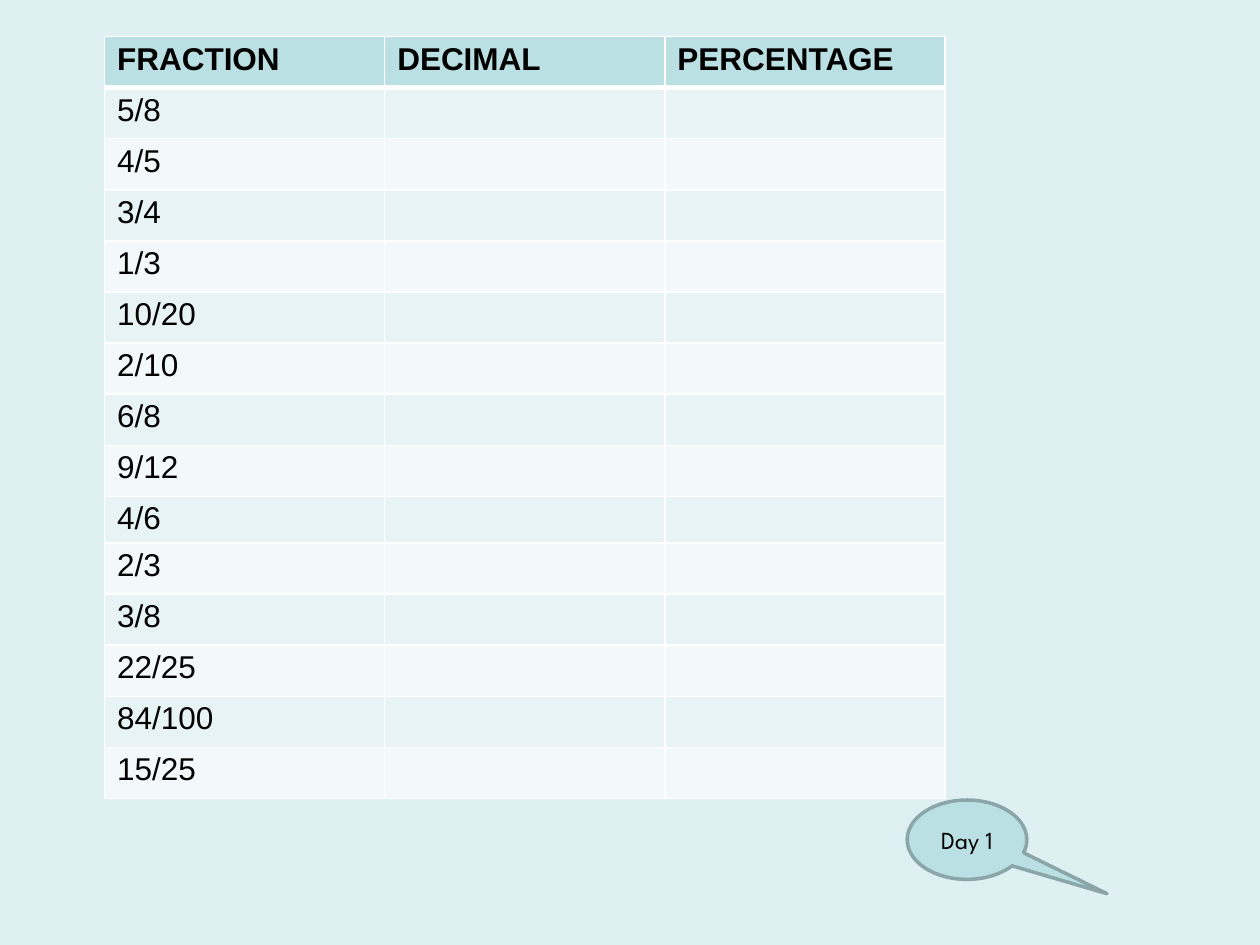
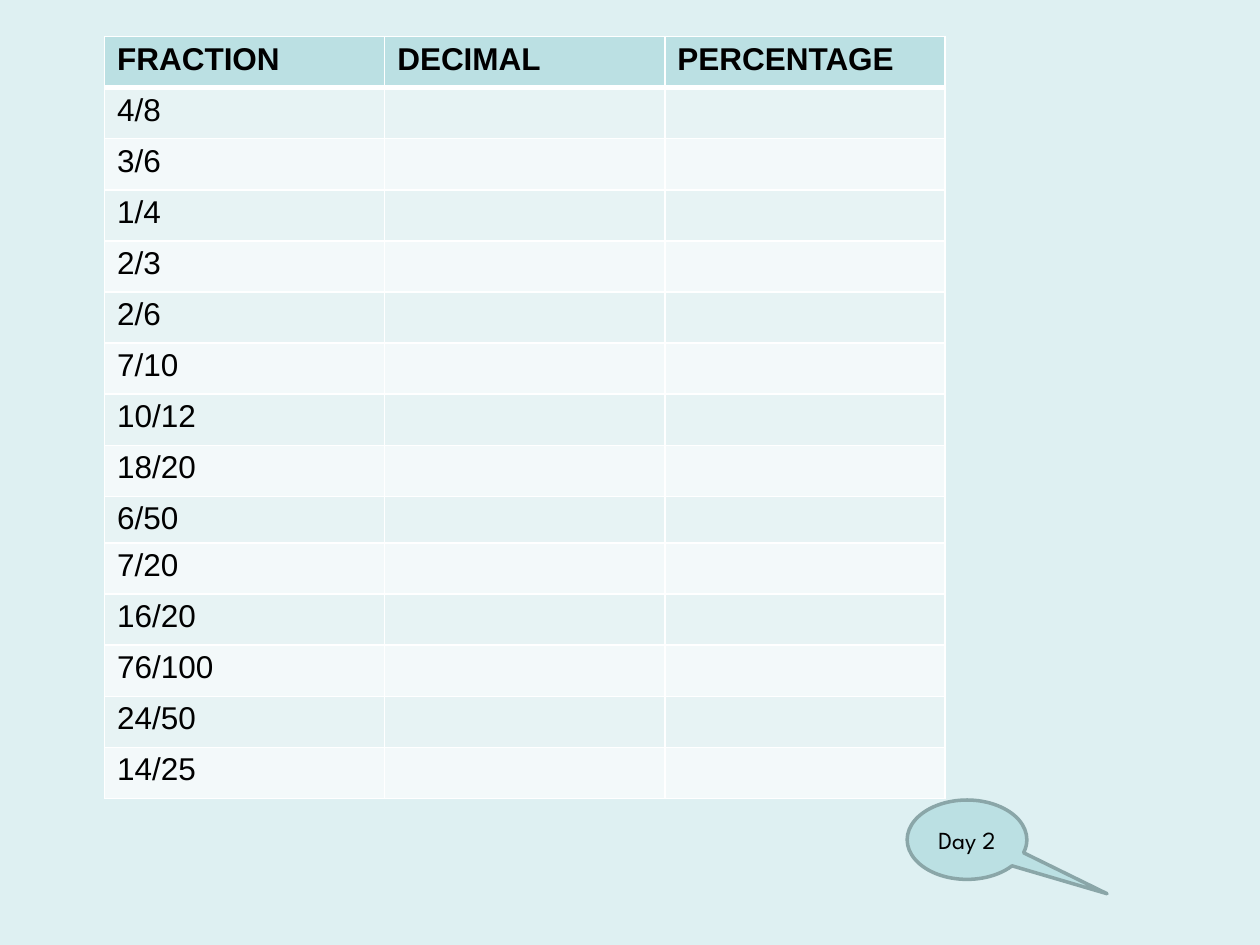
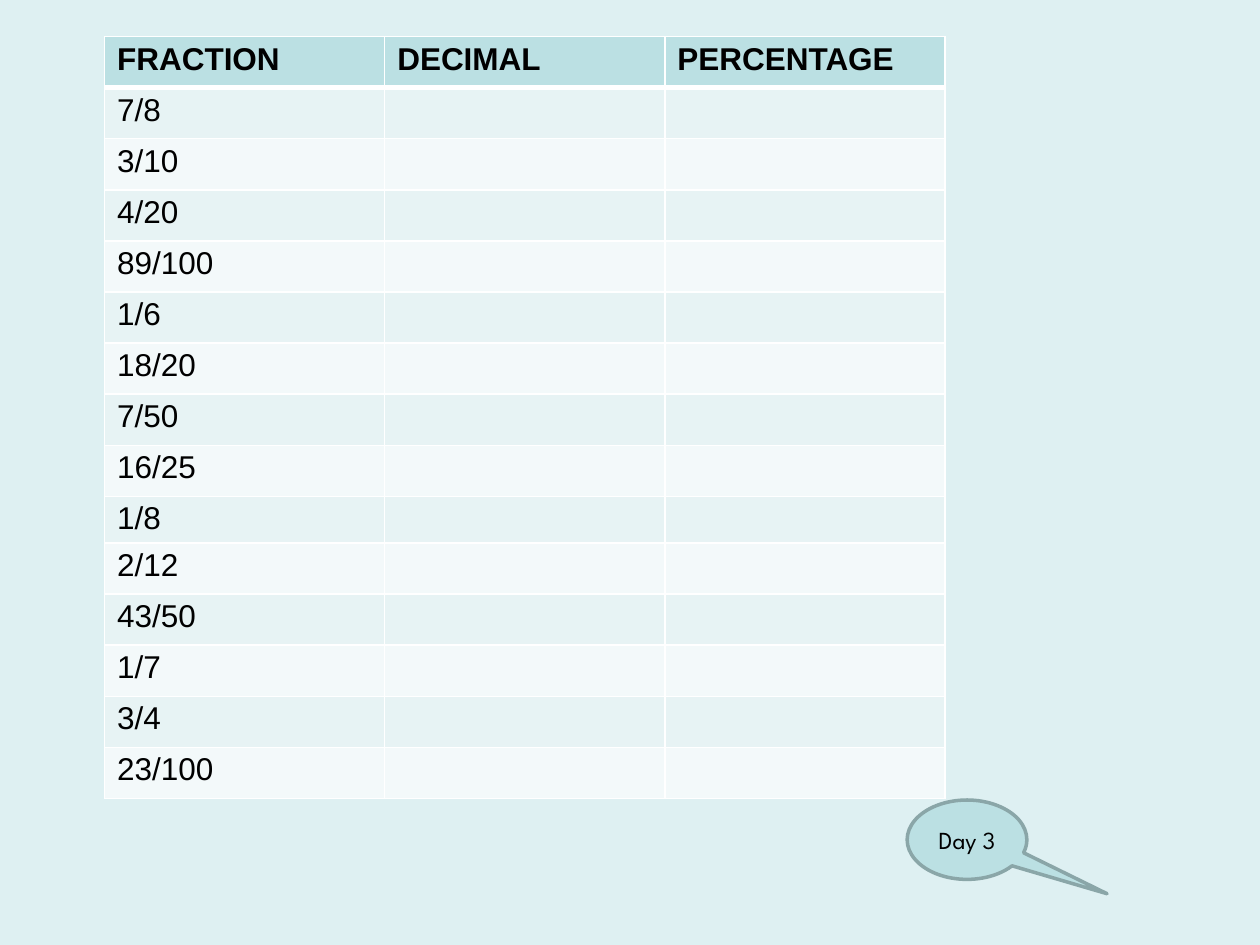
from lxml.etree import SubElement
from pptx import Presentation
from pptx.dml.color import RGBColor
from pptx.enum.shapes import MSO_SHAPE
from pptx.enum.text import MSO_ANCHOR, PP_ALIGN
from pptx.oxml.ns import qn
from pptx.util import Inches, Pt

COLORS = {
    "background": "DEF0F2",
    "accent": "BBE0E3",
    "odd_row": "E7F3F4",
    "even_row": "F3F9FA",
    "border": "FFFFFF",
    "outline": "8AA6A8",
    "text": "000000",
}
TABLE_FONT, DAY_FONT = "Arial", "League Spartan"

HEADERS = ["FRACTION", "DECIMAL", "PERCENTAGE"]
DAYS = {
    "Day 1": ["5/8", "4/5", "3/4", "1/3", "10/20", "2/10", "6/8",
              "9/12", "4/6", "2/3", "3/8", "22/25", "84/100", "15/25"],
    "Day 2": ["4/8", "3/6", "1/4", "2/3", "2/6", "7/10", "10/12",
              "18/20", "6/50", "7/20", "16/20", "76/100", "24/50", "14/25"],
    "Day 3": ["7/8", "3/10", "4/20", "89/100", "1/6", "18/20", "7/50",
              "16/25", "1/8", "2/12", "43/50", "1/7", "3/4", "23/100"],
}

# Table geometry in inches: all rows are equal except one shorter row
LEFT, TOP, WIDTH, HEIGHT = 0.83, 0.29, 6.67, 6.05
SHORT_ROW, SHORT_HEIGHT = 9, 0.37


def rgb(name):
    return RGBColor.from_string(COLORS[name])


def paint(fill, name):
    fill.solid()
    fill.fore_color.rgb = rgb(name)


def add_run(p, text, font, size, bold=False):
    r = p.add_run()
    r.text = text
    r.font.name, r.font.size, r.font.bold = font, Pt(size), bold
    r.font.color.rgb = rgb("text")


def set_borders(cell, top, bottom):
    tcPr = cell._tc.get_or_add_tcPr()
    for side, width in (("L", 1), ("R", 1), ("T", top), ("B", bottom)):
        ln = SubElement(tcPr, qn(f"a:ln{side}"), w=str(Pt(width)))
        fill = SubElement(ln, qn("a:solidFill"))
        SubElement(fill, qn("a:srgbClr"), val=COLORS["border"])


def fill_cell(cell, text, row):
    cell.margin_top = cell.margin_bottom = Inches(0.04)
    # The rule under the header is thicker than the others
    set_borders(cell, top=3 if row == 1 else 1, bottom=3 if row == 0 else 1)
    paint(cell.fill, "accent" if row == 0 else "odd_row" if row % 2 else "even_row")
    p = cell.text_frame.paragraphs[0]
    if text:
        add_run(p, text, TABLE_FONT, 18, bold=row == 0)
    else:
        # Empty cells need the table font too, to keep the row height
        end = SubElement(p._p, qn("a:endParaRPr"), sz="1800")
        SubElement(end, qn("a:latin"), typeface=TABLE_FONT)


def add_fraction_table(s, fractions):
    rows = [HEADERS] + [[fraction, "", ""] for fraction in fractions]
    table = s.shapes.add_table(len(rows), len(HEADERS), Inches(LEFT), Inches(TOP),
                               Inches(WIDTH), Inches(HEIGHT)).table
    table.horz_banding = False
    row_height = (HEIGHT - SHORT_HEIGHT) / (len(rows) - 1)
    for i, texts in enumerate(rows):
        table.rows[i].height = Inches(SHORT_HEIGHT if i == SHORT_ROW else row_height)
        for j, text in enumerate(texts):
            fill_cell(table.cell(i, j), text, i)


def add_day_callout(s, day):
    sp = s.shapes.add_shape(MSO_SHAPE.OVAL_CALLOUT, Inches(7.2), Inches(6.35),
                            Inches(0.95), Inches(0.63))
    sp.adjustments[0], sp.adjustments[1] = 1.17, 0.68
    sp.shadow.inherit = False
    paint(sp.fill, "accent")
    sp.line.color.rgb = rgb("outline")
    sp.line.width = Pt(2)
    tf = sp.text_frame
    tf.vertical_anchor = MSO_ANCHOR.MIDDLE
    p = tf.paragraphs[0]
    p.alignment = PP_ALIGN.CENTER
    add_run(p, day, DAY_FONT, 14)


def main():
    prs = Presentation()
    prs.slide_width, prs.slide_height = Inches(10), Inches(7.5)
    paint(prs.slide_master.background.fill, "background")
    blank = prs.slide_layouts[6]

    # One worksheet slide per day
    for day, fractions in DAYS.items():
        s = prs.slides.add_slide(blank)
        add_fraction_table(s, fractions)
        add_day_callout(s, day)

    prs.save("out.pptx")


if __name__ == "__main__":
    main()
